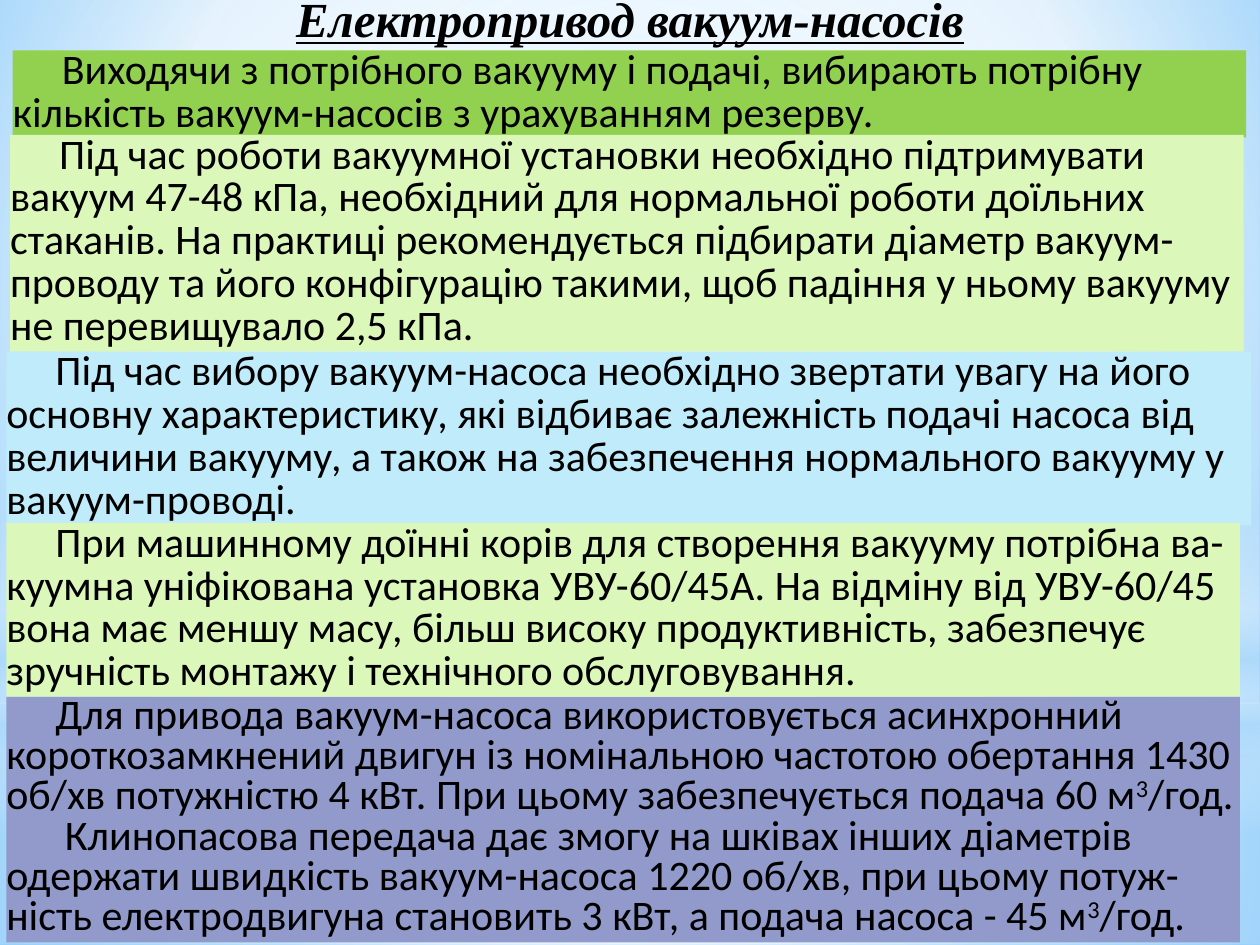
from lxml import etree
from pptx import Presentation
from pptx.dml.color import RGBColor
from pptx.enum.shapes import MSO_SHAPE
from pptx.enum.text import MSO_ANCHOR, MSO_AUTO_SIZE, PP_ALIGN
from pptx.oxml.ns import qn
from pptx.util import Inches, Pt

RECTANGLE, OVAL = MSO_SHAPE.RECTANGLE, MSO_SHAPE.OVAL
TOP = MSO_ANCHOR.TOP
FIT_SHAPE = MSO_AUTO_SIZE.SHAPE_TO_FIT_TEXT
LEFT, CENTER = PP_ALIGN.LEFT, PP_ALIGN.CENTER
TITLE_ONLY = 5

BLACK = RGBColor(0x00, 0x00, 0x00)
WHITE = RGBColor(0xFF, 0xFF, 0xFF)
SKY = RGBColor(0x9E, 0xD5, 0xFF)
AZURE = RGBColor(0x5B, 0xB9, 0xFF)
MIST = RGBColor(0xB4, 0xDC, 0xFA)
GREEN = RGBColor(0x92, 0xD0, 0x50)
LIME = RGBColor(0xDC, 0xF7, 0xBA)
PALE_BLUE = RGBColor(0xBF, 0xEB, 0xFA)
VIOLET = RGBColor(0x91, 0x9A, 0xCA)

CENTRE = (50, 50, 50, 50)
# Preset, box, focus (None for a vertical gradient), stops: position, colour, opacity
GLOWS = [
    (RECTANGLE, (0, 5.58, 10, 1.92), CENTRE,
     [(0, WHITE, 91), (37, WHITE, 76), (100, MIST, 79)]),
    (RECTANGLE, (0, 0, 10, 5.58), CENTRE,
     [(0, WHITE, 89), (48, WHITE, 62), (100, MIST, 79)]),
    (RECTANGLE, (0, 4.12, 10, 2.5), None,
     [(0, WHITE, 0), (29, WHITE, 30), (45, MIST, 40),
      (55, WHITE, 26), (65, MIST, 60), (100, WHITE, 0)]),
    (OVAL, (0, 1.75, 10, 5.58), CENTRE, [(0, WHITE, 100), (56, WHITE, 0)]),
]

# Box, colour, line spacing, paragraphs; ³ is set as a raised 3
PANELS = [
    ((0.1, 0.4, 9.79, 0.69), GREEN, 0.85, [
        "Виходячи з потрібного вакууму і подачі, вибирають потрібну кількість "
        "вакуум-насосів з урахуванням резерву."]),
    ((0.08, 1.07, 9.79, 1.72), LIME, 0.85, [
        "Під час роботи вакуумної установки необхідно підтримувати вакуум "
        "47-48 кПа, необхідний для нормальної роботи доїльних стаканів. На "
        "практиці рекомендується підбирати діаметр вакуум-проводу та його "
        "конфігурацію такими, щоб падіння у ньому вакууму не перевищувало "
        "2,5 кПа."]),
    ((0.05, 2.79, 9.88, 1.38), PALE_BLUE, 0.85, [
        "Під час вибору вакуум-насоса необхідно звертати увагу на його основну "
        "характеристику, які відбиває залежність подачі насоса від величини "
        "вакууму, а також на забезпечення нормального вакууму у "
        "вакуум-проводі."]),
    ((0.05, 4.15, 9.79, 1.38), LIME, 0.85, [
        "При машинному доїнні корів для створення вакууму потрібна ва-куумна "
        "уніфікована установка УВУ-60/45А. На відміну від УВУ-60/45 вона має "
        "меншу масу, більш високу продуктивність, забезпечує зручність монтажу "
        "і технічного обслуговування."]),
    ((0.05, 5.53, 9.79, 1.95), VIOLET, 0.8, [
        "Для привода вакуум-насоса використовується асинхронний "
        "короткозамкнений двигун із номінальною частотою обертання 1430 об/хв "
        "потужністю 4 кВт. При цьому забезпечується подача 60 м³/год.",
        " Клинопасова передача дає змогу на шківах інших діаметрів одержати "
        "швидкість вакуум-насоса 1220 об/хв, при цьому потуж-ність "
        "електродвигуна становить 3 кВт, а подача насоса - 45 м³/год."]),
]


def inches(box):
    return [Inches(length) for length in box]


def apply_gradient(fill, properties, focus, stops):
    """Give properties, the XML parent of fill, a radial or vertical gradient."""
    gradient = etree.Element(qn("a:gradFill"), rotWithShape="1")
    stop_list = etree.SubElement(gradient, qn("a:gsLst"))
    for position, color, opacity in stops:
        stop = etree.SubElement(stop_list, qn("a:gs"), pos=str(position * 1000))
        tint = etree.SubElement(stop, qn("a:srgbClr"), val=str(color))
        etree.SubElement(tint, qn("a:alpha"), val=str(opacity * 1000))
    if focus:
        route = etree.SubElement(gradient, qn("a:path"), path="circle")
        edges = {side: str(share * 1000) for side, share in zip("ltrb", focus)}
        etree.SubElement(route, qn("a:fillToRect"), **edges)
    else:
        etree.SubElement(gradient, qn("a:lin"), ang="5400000", scaled="0")
    fill.background()
    properties.replace(properties.find(qn("a:noFill")), gradient)


def add_plain_shape(slide, preset, box):
    shape = slide.shapes.add_shape(preset, *inches(box))
    shape.shadow.inherit = False
    shape.line.fill.background()
    return shape


def add_backdrop(slide):
    fill = slide.background.fill
    fill.background()
    apply_gradient(fill, slide.element.find(".//" + qn("p:bgPr")), (20, 10, 20, 60),
                   [(0, SKY, 100), (60, WHITE, 100), (100, AZURE, 100)])
    for preset, box, focus, stops in GLOWS:
        glow = add_plain_shape(slide, preset, box)
        apply_gradient(glow.fill, glow.element.spPr, focus, stops)


def set_up_frame(frame):
    frame.word_wrap = True
    frame.auto_size = FIT_SHAPE
    frame.vertical_anchor = TOP
    frame.margin_left = frame.margin_right = 0
    frame.margin_top = frame.margin_bottom = 0


def format_run(run, font_name, size):
    run.font.name = font_name
    run.font.size = Pt(size)
    run.font.color.rgb = BLACK


def add_title(slide, box, wording):
    title = slide.shapes.title
    title.left, title.top, title.width, title.height = inches(box)
    slide.shapes.element.append(title.element)  # in front of the backdrop
    title.text_frame.text = wording
    set_up_frame(title.text_frame)
    heading = title.text_frame.paragraphs[0]
    heading.alignment = CENTER
    heading.line_spacing = 0.85
    heading.space_before = Pt(0)
    run = heading.runs[0]
    format_run(run, "Times New Roman", 28)
    run.font.bold = run.font.italic = run.font.underline = True


def add_panel(slide, box, color, line_spacing, wordings):
    panel = add_plain_shape(slide, RECTANGLE, box)
    panel.fill.solid()
    panel.fill.fore_color.rgb = color
    frame = panel.text_frame
    set_up_frame(frame)
    frame.text = "\n".join(wordings)
    for paragraph, wording in zip(frame.paragraphs, wordings):
        paragraph.alignment = LEFT
        paragraph.line_spacing = line_spacing
        paragraph._p.get_or_add_pPr().set("indent", str(Inches(0.39)))
        before, power, after = wording.partition("³")
        paragraph.text = before
        if power:
            exponent = paragraph.add_run()
            exponent.text = "3"
            exponent.font._element.set("baseline", "30000")
            paragraph.add_run().text = after
        for run in paragraph.runs:
            format_run(run, "Calibri", 24)


def main():
    presentation = Presentation()
    presentation.slide_width, presentation.slide_height = Inches(10), Inches(7.5)
    slide = presentation.slides.add_slide(presentation.slide_layouts[TITLE_ONLY])
    add_backdrop(slide)
    add_title(slide, (0.97, -0.02, 8.06, 0.4), "Електропривод вакуум-насосів")
    for panel in PANELS:
        add_panel(slide, *panel)
    presentation.save("out.pptx")


if __name__ == "__main__":
    main()
